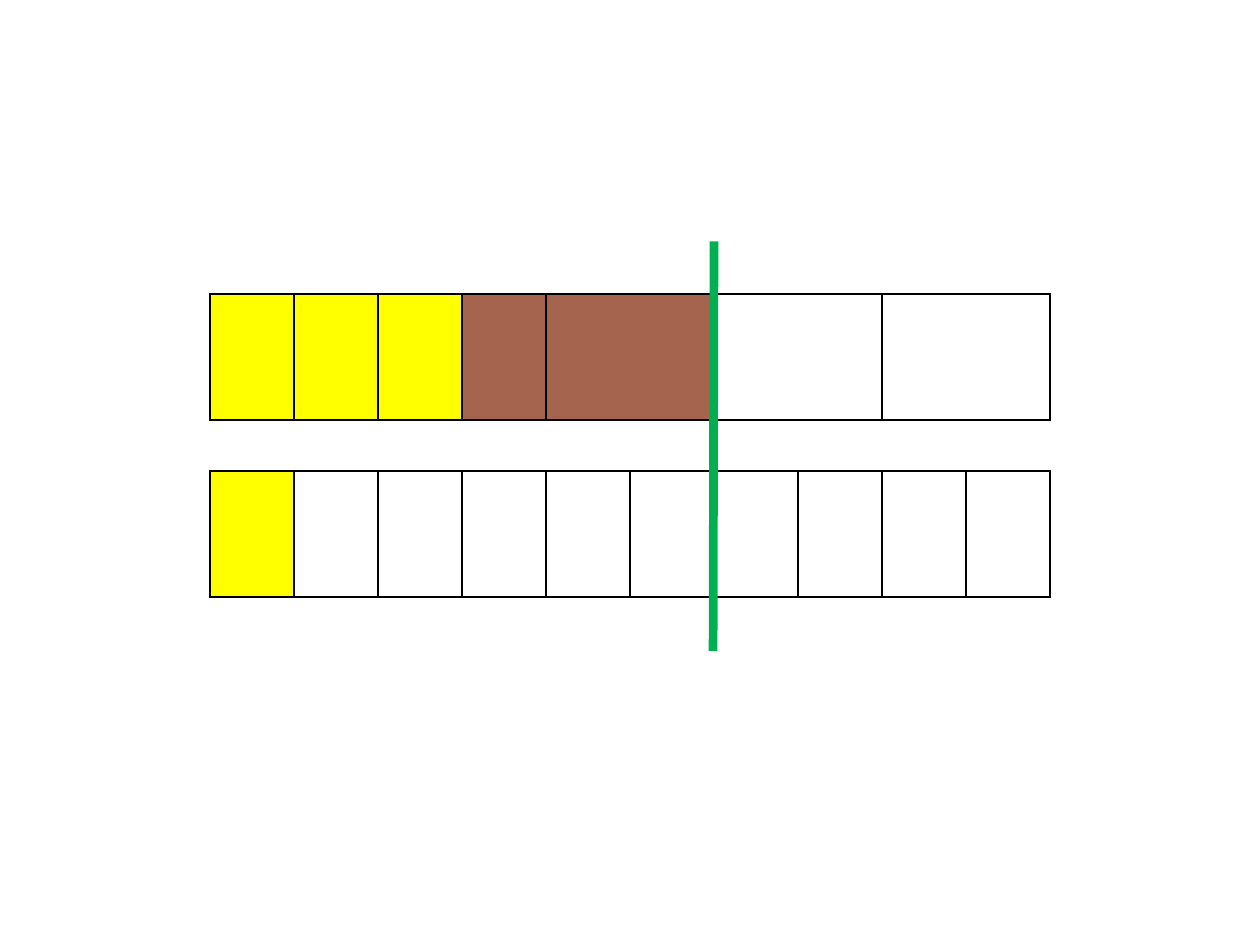
"""Build a slide with two fraction bars and a vertical marker line."""
from dataclasses import dataclass

from lxml.etree import SubElement
from pptx import Presentation
from pptx.dml.color import RGBColor
from pptx.enum.shapes import MSO_CONNECTOR
from pptx.oxml.ns import qn
from pptx.util import Pt


@dataclass(frozen=True)
class Theme:
    yellow: str = "FFFF00"
    brown: str = "A5644E"
    green: str = "00B050"
    border: str = "000000"


theme = Theme()


def set_border(cell, side, color):
    line = SubElement(cell._tc.get_or_add_tcPr(), qn(f"a:ln{side}"), w=str(Pt(1)))
    if color:
        fill = SubElement(line, qn("a:solidFill"))
        SubElement(fill, qn("a:srgbClr"), val=color)
    else:
        SubElement(line, qn("a:noFill"))


presentation = Presentation()
presentation.slide_width = Pt(720)
presentation.slide_height = Pt(540)
slide = presentation.slides.add_slide(presentation.slide_layouts[6])

row_heights = [72, 28.8, 72]
column_count = 10
column_width = 48
table = slide.shapes.add_table(
    len(row_heights), column_count, Pt(120), Pt(168),
    Pt(column_count * column_width), Pt(sum(row_heights)),
).table
table.first_row = False
table.horz_banding = False
for column in table.columns:
    column.width = Pt(column_width)
for row, height in zip(table.rows, row_heights):
    row.height = Pt(height)

fills = {(0, column): theme.yellow for column in range(3)}
fills.update({(0, column): theme.brown for column in range(3, 6)})
fills[2, 0] = theme.yellow

for row_index in range(len(row_heights)):
    for column_index in range(column_count):
        cell = table.cell(row_index, column_index)
        for side in "LRTB":
            is_gap_edge = row_index == 1 and side in "LR"
            set_border(cell, side, None if is_gap_edge else theme.border)
        color = fills.get((row_index, column_index))
        if color:
            cell.fill.solid()
            cell.fill.fore_color.rgb = RGBColor.from_string(color)
        else:
            cell.fill.background()

for row_index, first, last in [(0, 4, 5), (0, 6, 7), (0, 8, 9), (1, 0, 9)]:
    table.cell(row_index, first).merge(table.cell(row_index, last))

marker = slide.shapes.add_connector(
    MSO_CONNECTOR.STRAIGHT, Pt(408), Pt(138), Pt(407.5), Pt(372)
)
marker.line.color.rgb = RGBColor.from_string(theme.green)
marker.line.width = Pt(5)
SubElement(marker._element.spPr, qn("a:effectLst"))

presentation.save("out.pptx")
